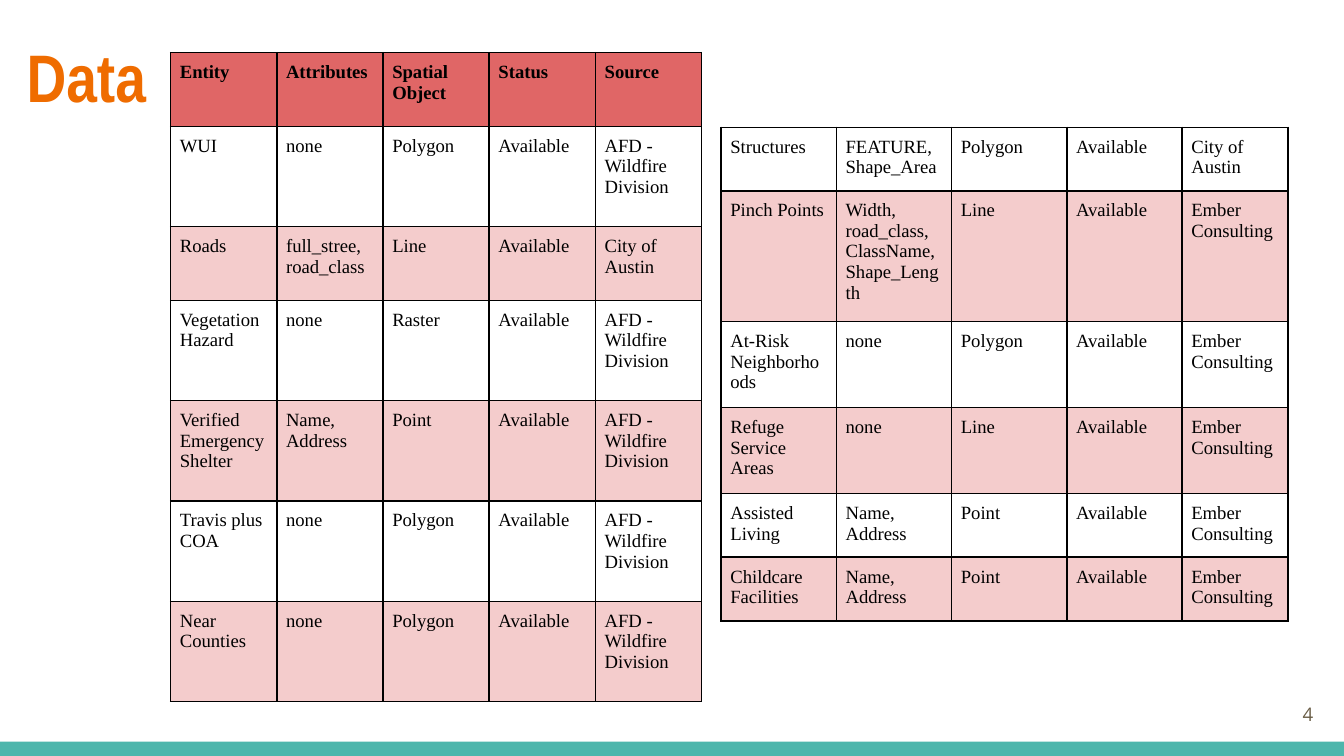
from dataclasses import dataclass

from lxml import etree
from pptx import Presentation
from pptx.dml.color import RGBColor
from pptx.enum.shapes import MSO_SHAPE
from pptx.enum.text import MSO_ANCHOR, PP_ALIGN
from pptx.oxml.ns import qn
from pptx.util import Pt

RECTANGLE = MSO_SHAPE.RECTANGLE
TOP, MIDDLE = MSO_ANCHOR.TOP, MSO_ANCHOR.MIDDLE
LEFT, RIGHT = PP_ALIGN.LEFT, PP_ALIGN.RIGHT


@dataclass(frozen=True)
class Theme:
    title_font: str = "Arial Narrow"
    table_font: str = "Times New Roman"
    number_font: str = "Open Sans"
    title_size: float = 36
    body_size: float = 10
    title_color: str = "EF6C00"
    number_color: str = "695D46"
    footer_color: str = "4DB6AC"
    text_color: str = "000000"
    border_color: str = "000000"
    header_fill: str = "E06666"
    band_fill: str = "F4CCCC"
    plain_fill: str = "FFFFFF"
    border_width: float = 1
    text_inset: float = 7.2
    cell_inset: float = 5


THEME = Theme()

HEADER = ["Entity", "Attributes", "Spatial Object", "Status", "Source"]
STATUS = "Available"
WILDFIRE = "AFD - Wildfire Division"
CITY = "City of Austin"
CONSULTANT = "Ember Consulting"

CITY_ROWS = [
    ["WUI", "none", "Polygon", STATUS, WILDFIRE],
    ["Roads", "full_stree, road_class", "Line", STATUS, CITY],
    ["Vegetation Hazard", "none", "Raster", STATUS, WILDFIRE],
    ["Verified Emergency Shelter", "Name, Address", "Point", STATUS, WILDFIRE],
    ["Travis plus COA", "none", "Polygon", STATUS, WILDFIRE],
    ["Near Counties", "none", "Polygon", STATUS, WILDFIRE],
]
CITY_HEIGHTS = [39.5, 53.75, 39.5] + [53.75] * 4

CONSULTANT_ROWS = [
    ["Structures", "FEATURE, Shape_Area", "Polygon", STATUS, CITY],
    ["Pinch Points", "Width, road_class, ClassName, Shape_Length",
     "Line", STATUS, CONSULTANT],
    ["At-Risk Neighborhoods", "none", "Polygon", STATUS, CONSULTANT],
    ["Refuge Service Areas", "none", "Line", STATUS, CONSULTANT],
    ["Assisted Living", "Name, Address", "Point", STATUS, CONSULTANT],
    ["Childcare Facilities", "Name, Address", "Point", STATUS, CONSULTANT],
]
CONSULTANT_HEIGHTS = [33.75, 65, 43, 43, 32, 32]


def write_text(text_frame, text, font, size, color, bold=False, align=LEFT):
    paragraph = text_frame.paragraphs[0]
    paragraph.alignment = align
    run = paragraph.add_run()
    run.text = text
    run.font.name = font
    run.font.size = Pt(size)
    run.font.bold = bold
    run.font.color.rgb = RGBColor.from_string(color)


def set_insets(target, inset):
    """Give a text frame or table cell the same margin on all sides."""
    target.margin_left = target.margin_right = Pt(inset)
    target.margin_top = target.margin_bottom = Pt(inset)


def add_text_box(slide, left, top, width, height, anchor):
    box = slide.shapes.add_textbox(Pt(left), Pt(top), Pt(width), Pt(height))
    text_frame = box.text_frame
    text_frame.word_wrap = True
    text_frame.vertical_anchor = anchor
    set_insets(text_frame, THEME.text_inset)
    return text_frame


def add_title(slide, left, top, width, height):
    text_frame = add_text_box(slide, left, top, width, height, TOP)
    write_text(text_frame, "Data", THEME.title_font, THEME.title_size,
               THEME.title_color, bold=True)


def add_page_number(slide, left, top, width, height):
    text_frame = add_text_box(slide, left, top, width, height, MIDDLE)
    write_text(text_frame, "4", THEME.number_font, THEME.body_size,
               THEME.number_color, align=RIGHT)


def add_footer_bar(slide, left, top, width, height):
    bar = slide.shapes.add_shape(
        RECTANGLE, Pt(left), Pt(top), Pt(width), Pt(height))
    bar.shadow.inherit = False
    bar.fill.solid()
    bar.fill.fore_color.rgb = RGBColor.from_string(THEME.footer_color)
    bar.line.fill.background()


def add_borders(cell):
    """Draw the four cell edges, which must come before the cell fill."""
    properties = cell._tc.get_or_add_tcPr()
    for index, edge in enumerate(("a:lnL", "a:lnR", "a:lnT", "a:lnB")):
        line = etree.Element(qn(edge), w=str(Pt(THEME.border_width)))
        fill = etree.SubElement(line, qn("a:solidFill"))
        etree.SubElement(fill, qn("a:srgbClr"), val=THEME.border_color)
        properties.insert(index, line)


def format_cell(cell, text, fill, bold):
    cell.fill.solid()
    cell.fill.fore_color.rgb = RGBColor.from_string(fill)
    add_borders(cell)
    set_insets(cell, THEME.cell_inset)
    cell.vertical_anchor = TOP
    write_text(cell.text_frame, text, THEME.table_font, THEME.body_size,
               THEME.text_color, bold)


def add_data_table(slide, left, top, widths, heights, rows, header=None):
    """Place a table whose every second body row is tinted."""
    lines = ([header] if header else []) + rows
    table = slide.shapes.add_table(
        len(lines), len(widths), Pt(left), Pt(top),
        Pt(sum(widths)), Pt(sum(heights))).table
    table.first_row = bool(header)
    table.horz_banding = False
    for column, width in zip(table.columns, widths):
        column.width = Pt(width)
    for row, height in zip(table.rows, heights):
        row.height = Pt(height)

    bands = (THEME.plain_fill, THEME.band_fill)
    fills = [bands[index % 2] for index in range(len(rows))]
    if header:
        fills.insert(0, THEME.header_fill)
    for row, texts, fill in zip(table.rows, lines, fills):
        for cell, text in zip(row.cells, texts):
            format_cell(cell, text, fill, bold=texts is header)


def build_data_slide(presentation):
    slide = presentation.slides.add_slide(presentation.slide_layouts[6])
    add_footer_bar(slide, 0, 397.4, 720, 7.6)
    add_title(slide, 7.2, 11.5, 678, 55.5)
    add_page_number(slide, 667.4, 367.2, 43.2, 31)
    add_data_table(slide, 91.4, 28.2, [56.9] * 5, CITY_HEIGHTS,
                   CITY_ROWS, HEADER)
    add_data_table(slide, 386.3, 68.2, [61.75] * 4 + [56.8],
                   CONSULTANT_HEIGHTS, CONSULTANT_ROWS)


def main():
    presentation = Presentation()
    presentation.slide_width = Pt(720)
    presentation.slide_height = Pt(405)
    build_data_slide(presentation)
    presentation.save("out.pptx")


if __name__ == "__main__":
    main()
